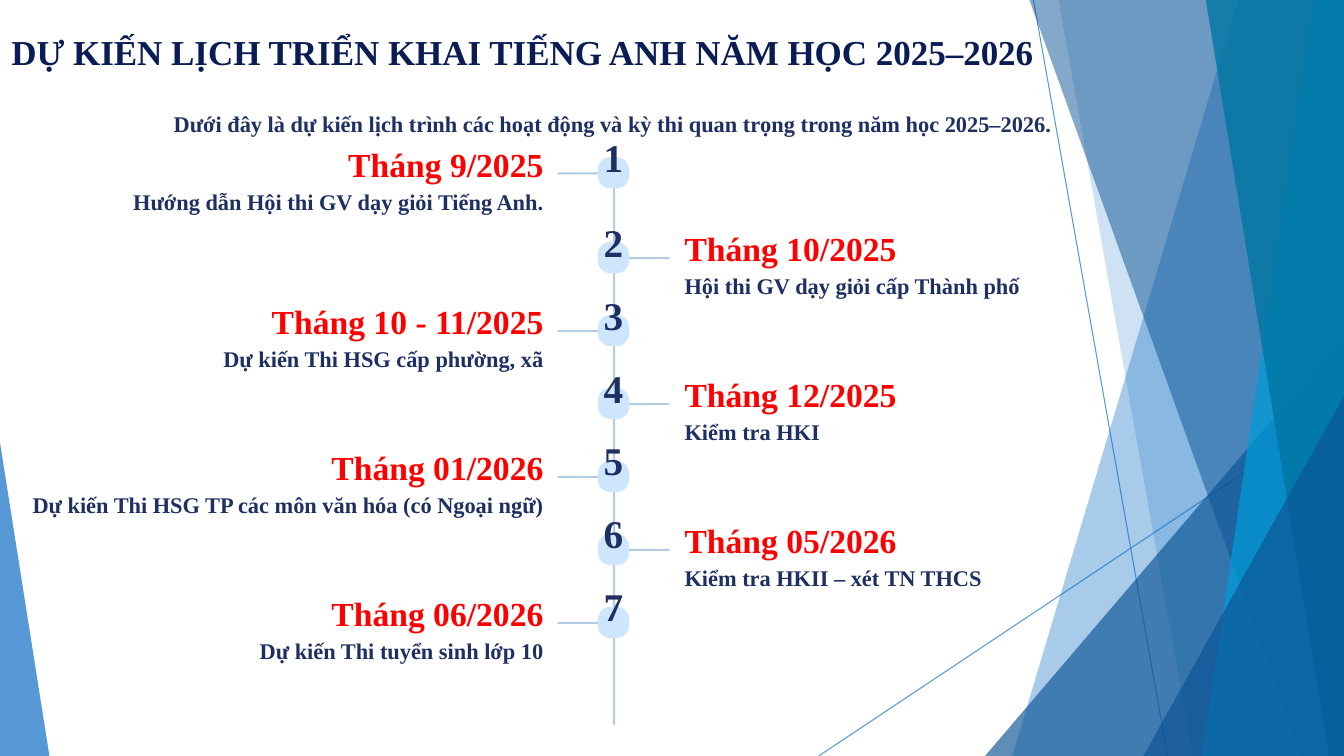
from dataclasses import dataclass

from lxml import etree
from pptx import Presentation
from pptx.dml.color import RGBColor
from pptx.enum.shapes import MSO_CONNECTOR, MSO_SHAPE
from pptx.enum.text import PP_ALIGN
from pptx.oxml.ns import qn
from pptx.util import Inches, Pt

TRIANGLE = MSO_SHAPE.ISOSCELES_TRIANGLE
ROUND = MSO_SHAPE.ROUNDED_RECTANGLE
STRAIGHT = MSO_CONNECTOR.STRAIGHT
LEFT, CENTER, RIGHT = PP_ALIGN.LEFT, PP_ALIGN.CENTER, PP_ALIGN.RIGHT

BLUE = RGBColor(0x0F, 0x6F, 0xC6)
DEEP = RGBColor(0x0B, 0x53, 0x94)
CYAN = RGBColor(0x00, 0x9D, 0xD9)
TEAL = RGBColor(0x00, 0x76, 0xA3)
NAVY = RGBColor(0x09, 0x1C, 0x53)
INK = RGBColor(0x1E, 0x30, 0x63)
RED = RGBColor(0xFF, 0x00, 0x00)
RAIL = RGBColor(0xB4, 0xCC, 0xE3)
BADGE = RGBColor(0xCE, 0xE6, 0xFD)

FONT = "Times New Roman"
WIDE, HIGH = 13.33, 7.5


@dataclass
class Band:
    """A panel from its slanted left edge to the right side of the slide."""
    top: float
    foot: float
    color: RGBColor
    alpha: int


@dataclass
class Wedge:
    left: float
    top: float
    width: float
    apex: float
    color: RGBColor
    alpha: int


@dataclass
class Style:
    size: float
    pitch: float
    color: RGBColor


@dataclass
class Step:
    month: str
    task: str


TITLE = Style(25, 31.2, NAVY)
BODY = Style(16, 15.8, INK)
MONTH = Style(24, 15.4, RED)
DIGIT = Style(28, 15, INK)

RAYS = [(10.25, 0, 11.58, HIGH), (WIDE, 4.03, 8.12, HIGH)]
PANELS = [
    Band(12.28, 10.04, BLUE, 36),
    Band(10.5, 11.83, BLUE, 20),
    Wedge(9.77, 3.33, 3.56, 1, DEEP, 66),
    Band(10.21, 12.91, DEEP, 50),
    Band(13.03, 11.92, CYAN, 70),
    Band(11.96, 13.18, TEAL, 80),
    Wedge(11.34, 3.93, 1.99, 1, DEEP, 66),
    Wedge(0, 4.39, 0.49, 0, BLUE, 70),
]
STEPS = [
    Step("Tháng 9/2025", "Hướng dẫn Hội thi GV dạy giỏi Tiếng Anh."),
    Step("Tháng 10/2025", "Hội thi GV dạy giỏi cấp Thành phố"),
    Step("Tháng 10 - 11/2025", "Dự kiến Thi HSG cấp phường, xã"),
    Step("Tháng 12/2025", "Kiểm tra HKI"),
    Step("Tháng 01/2026", "Dự kiến Thi HSG TP các môn văn hóa (có Ngoại ngữ)"),
    Step("Tháng 05/2026", "Kiểm tra HKII – xét TN THCS"),
    Step("Tháng 06/2026", "Dự kiến Thi tuyển sinh lớp 10"),
]
FIRST, SECOND, LAST = 1.56, 2.4, 6.02
GAP = (LAST - SECOND) / (len(STEPS) - 2)


def fade(props, alpha: int) -> None:
    """Set the opacity, in percent, of the colour found in props."""
    color = next(props.iter(qn("a:srgbClr")))
    etree.SubElement(color, qn("a:alpha")).set("val", str(alpha * 1000))


def paint(shape, color: RGBColor) -> None:
    shape.shadow.inherit = False
    shape.fill.solid()
    shape.fill.fore_color.rgb = color
    shape.line.fill.background()


def add_ray(slide, ends: tuple) -> None:
    ray = slide.shapes.add_connector(STRAIGHT, *map(Inches, ends))
    ray.line.color.rgb = BLUE
    ray.line.width = Pt(0.75)
    props = ray._element.spPr
    fade(props, 70)
    etree.SubElement(props, qn("a:effectLst"))


def add_panel(slide, panel: Band | Wedge) -> None:
    if isinstance(panel, Band):
        edge = [(WIDE, 0), (WIDE, HIGH), (panel.foot, HIGH)]
        pen = slide.shapes.build_freeform(Inches(panel.top), 0)
        pen.add_line_segments([(Inches(x), Inches(y)) for x, y in edge])
        shape = pen.convert_to_shape()
    else:
        box = (panel.left, panel.top, panel.width, HIGH - panel.top)
        shape = slide.shapes.add_shape(TRIANGLE, *map(Inches, box))
        shape.adjustments[0] = panel.apex
    paint(shape, panel.color)
    fade(shape._element.spPr, panel.alpha)


def add_bar(slide, box: tuple, color: RGBColor, bend: float = 0.06) -> None:
    bar = slide.shapes.add_shape(ROUND, *map(Inches, box))
    bar.adjustments[0] = bend
    paint(bar, color)


def add_text(slide, box: tuple, text: str, style: Style, align: PP_ALIGN) -> None:
    frame = slide.shapes.add_textbox(*map(Inches, box)).text_frame
    frame.margin_left = frame.margin_right = 0
    frame.margin_top = frame.margin_bottom = 0
    frame.word_wrap = False
    para = frame.paragraphs[0]
    para.text = text
    para.alignment = align
    para.line_spacing = Pt(style.pitch)
    font = para.font
    font.name, font.size, font.bold = FONT, Pt(style.size), True
    font.color.rgb = style.color


def add_step(slide, index: int, step: Step) -> None:
    """Draw one stop; stops alternate left and right of the rail."""
    top = SECOND + GAP * (index - 1) if index else FIRST
    if index % 2:
        arm, month, task, align = 6.22, 6.79, 6.79, LEFT
    else:
        arm, month, task, align = 5.53, 2.59, -0.09, RIGHT
    add_bar(slide, (arm, top + 0.15, 0.42, 0.02), RAIL)
    add_bar(slide, (5.93, top, 0.31, 0.31), BADGE, 0.4)
    add_text(slide, (5.98, top + 0.02, 0.21, 0.26), str(index + 1), DIGIT, CENTER)
    add_text(slide, (month, top + 0.05, 2.8, 0.22), step.month, MONTH, align)
    add_text(slide, (task, top + 0.35, 5.48, 0.22), step.task, BODY, align)


def main() -> None:
    deck = Presentation()
    deck.slide_width, deck.slide_height = Inches(WIDE), Inches(HIGH)
    slide = deck.slides.add_slide(deck.slide_layouts[6])
    for ray in RAYS:
        add_ray(slide, ray)
    for panel in PANELS:
        add_panel(slide, panel)
    add_text(slide, (0.03, 0.29, 10.3, 0.44),
             "DỰ KIẾN LỊCH TRIỂN KHAI TIẾNG ANH NĂM HỌC 2025–2026",
             TITLE, CENTER)
    add_text(slide, (-0.1, 1.14, 12.35, 0.22),
             "Dưới đây là dự kiến lịch trình các hoạt động và kỳ thi "
             "quan trọng trong năm học 2025–2026.", BODY, CENTER)
    add_bar(slide, (6.08, FIRST, 0.02, 5.63), RAIL)
    for index, step in enumerate(STEPS):
        add_step(slide, index, step)
    deck.save("out.pptx")


if __name__ == "__main__":
    main()
